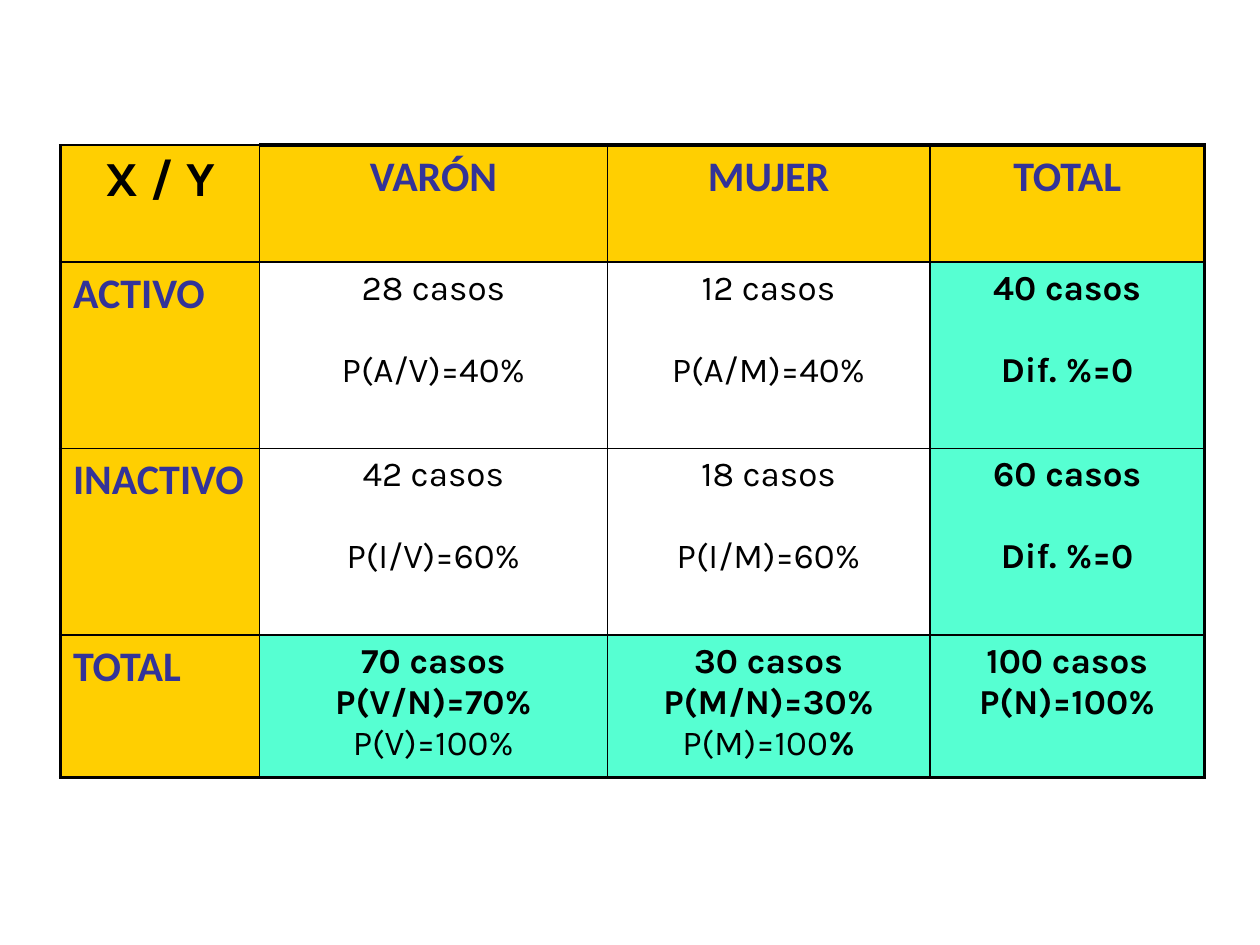
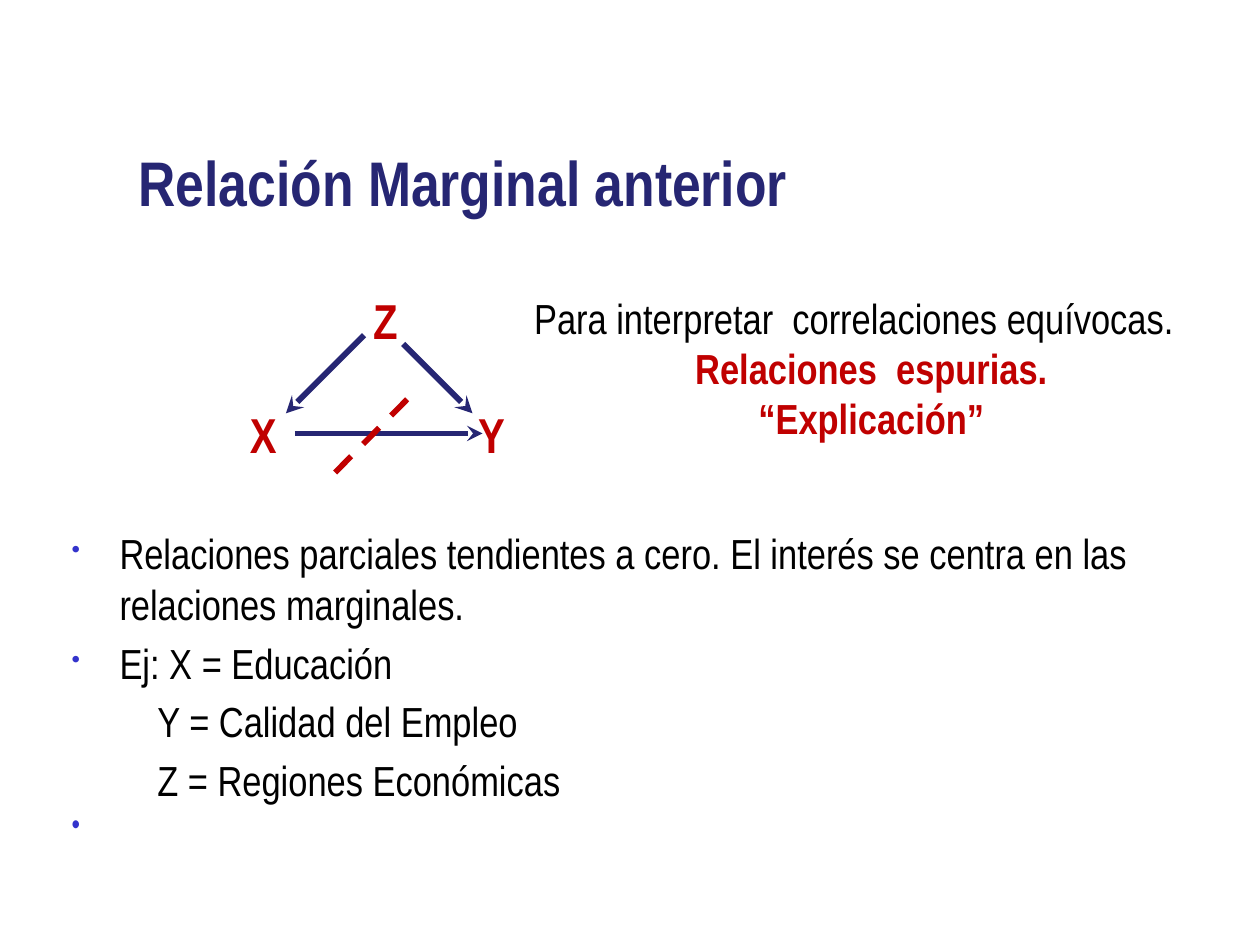
from dataclasses import dataclass

from lxml import etree
from pptx import Presentation
from pptx.dml.color import RGBColor
from pptx.enum.dml import MSO_LINE
from pptx.enum.shapes import MSO_CONNECTOR
from pptx.enum.text import MSO_ANCHOR, MSO_AUTO_SIZE, PP_ALIGN
from pptx.oxml.ns import qn
from pptx.util import Inches, Pt

LEFT, CENTER = PP_ALIGN.LEFT, PP_ALIGN.CENTER
TOP, MIDDLE, BOTTOM = MSO_ANCHOR.TOP, MSO_ANCHOR.MIDDLE, MSO_ANCHOR.BOTTOM
NO_AUTOFIT = MSO_AUTO_SIZE.NONE
DASH = MSO_LINE.DASH
STRAIGHT = MSO_CONNECTOR.STRAIGHT
TITLE_ONLY, BLANK = 5, 6

BLACK, WHITE = "000000", "FFFFFF"
GOLD, MINT = "FFCF01", "56FFD2"
HEADING_BLUE, NAVY, RED, BULLET_BLUE = "333399", "262673", "C00000", "3333CC"
NARROW, HEADING_FONT, DATA_FONT = "Arial Narrow", "Calibri", "Karla"
THIN, THICK = 1, 2.25


@dataclass(frozen=True)
class Run:
    text: str
    bold: bool = False


@dataclass(frozen=True)
class Line:
    runs: tuple[Run, ...]
    gap: float = 0


@dataclass(frozen=True)
class Arrow:
    start: tuple[float, float]
    end: tuple[float, float]
    color: str = NAVY
    width: float = 3.25
    dashed: bool = False


@dataclass(frozen=True)
class Letter:
    text: str
    x: float
    y: float


@dataclass(frozen=True)
class Point:
    text: str
    bullet: bool = False
    margin: float = 0.38
    size: float = 24
    color: str = BLACK
    gap: float = 4.8


def rgb(color: str) -> RGBColor:
    return RGBColor.from_string(color)


def write(paragraph, text: str, *, font: str = NARROW, size: float = 24,
          color: str = BLACK, bold: bool = False, align=LEFT, gap: float = 0) -> None:
    paragraph.alignment = align
    paragraph.space_before = Pt(gap)
    run = paragraph.add_run()
    run.text = text
    run.font.name = font
    run.font.size = Pt(size)
    run.font.bold = bold
    run.font.color.rgb = rgb(color)


def next_paragraph(frame, index: int):
    return frame.add_paragraph() if index else frame.paragraphs[0]


def add_frame(slide, left: float, top: float, width: float, height: float, anchor=TOP):
    frame = slide.shapes.add_textbox(
        Inches(left), Inches(top), Inches(width), Inches(height)).text_frame
    frame.word_wrap = True
    frame.vertical_anchor = anchor
    return frame


def set_borders(cell, widths: dict[str, float]) -> None:
    properties = cell._tc.get_or_add_tcPr()
    for side, width in widths.items():
        border = etree.SubElement(properties, qn(f"a:ln{side}"), w=str(Pt(width)))
        fill = etree.SubElement(border, qn("a:solidFill"))
        etree.SubElement(fill, qn("a:srgbClr"), val=BLACK)


def add_bullet(paragraph) -> None:
    properties = paragraph._p.get_or_add_pPr()
    color = etree.SubElement(properties, qn("a:buClr"))
    etree.SubElement(color, qn("a:srgbClr"), val=BULLET_BLUE)
    etree.SubElement(properties, qn("a:buSzPct"), val="60000")
    etree.SubElement(properties, qn("a:buChar"), char="•")


def add_arrow(slide, arrow: Arrow) -> None:
    connector = slide.shapes.add_connector(
        STRAIGHT, *(Inches(value) for value in arrow.start + arrow.end))
    connector.line.color.rgb = rgb(arrow.color)
    connector.line.width = Pt(arrow.width)
    if arrow.dashed:
        connector.line.dash_style = DASH
    else:
        etree.SubElement(connector.line._get_or_add_ln(), qn("a:tailEnd"), type="stealth")
    etree.SubElement(connector._element.spPr, qn("a:effectLst"))


COLUMN_WIDTHS = (1.58, 2.76, 2.56, 2.18)
ROW_HEIGHTS = (0.93, 1.48, 1.48, 1.13)
COLUMN_HEADINGS = ("VARÓN", "MUJER", "TOTAL")
ROW_HEADINGS = ("ACTIVO", "INACTIVO", "TOTAL")
SPLIT_GAP = 23.4


def split_cell(cases: str, share: str, bold: bool = False) -> tuple[Line, ...]:
    return Line((Run(cases, bold),)), Line((Run(share, bold),), SPLIT_GAP)


def total_cell(cases: str, share: str, *column_share: Run) -> tuple[Line, ...]:
    lines = Line((Run(cases, True),)), Line((Run(share, True),))
    return lines + ((Line(column_share),) if column_share else ())


CASES = (
    (split_cell("28 casos", "P(A/V)=40%"), split_cell("12 casos", "P(A/M)=40%"),
     split_cell("40 casos", "Dif. %=0", True)),
    (split_cell("42 casos", "P(I/V)=60%"), split_cell("18 casos", "P(I/M)=60%"),
     split_cell("60 casos", "Dif. %=0", True)),
    (total_cell("70 casos", "P(V/N)=70%", Run("P(V)=100%")),
     total_cell("30 casos", "P(M/N)=30%", Run("P(M)=100"), Run("%", True)),
     total_cell("100 casos", "P(N)=100%")),
)


def fill_cell(cell, row: int, column: int) -> None:
    first = cell.text_frame.paragraphs[0]
    if row == 0 and column == 0:
        write(first, "X / Y", font=DATA_FONT, size=28, bold=True, align=CENTER)
    elif row == 0:
        write(first, COLUMN_HEADINGS[column - 1], font=HEADING_FONT,
              color=HEADING_BLUE, bold=True, align=CENTER)
    elif column == 0:
        write(first, ROW_HEADINGS[row - 1], font=HEADING_FONT,
              color=HEADING_BLUE, bold=True)
    else:
        for index, line in enumerate(CASES[row - 1][column - 1]):
            paragraph = next_paragraph(cell.text_frame, index)
            for run in line.runs:
                write(paragraph, run.text, font=DATA_FONT, size=20,
                      bold=run.bold, align=CENTER, gap=line.gap)


def build_contingency_slide(deck) -> None:
    slide = deck.slides.add_slide(deck.slide_layouts[BLANK])
    last_row, last_column = len(ROW_HEIGHTS) - 1, len(COLUMN_WIDTHS) - 1
    table = slide.shapes.add_table(
        len(ROW_HEIGHTS), len(COLUMN_WIDTHS), Inches(0.48), Inches(1.15),
        Inches(sum(COLUMN_WIDTHS)), Inches(sum(ROW_HEIGHTS))).table
    table.first_row = table.horz_banding = False
    for column, width in enumerate(COLUMN_WIDTHS):
        table.columns[column].width = Inches(width)
    for row, height in enumerate(ROW_HEIGHTS):
        table.rows[row].height = Inches(height)
        for column in range(len(COLUMN_WIDTHS)):
            cell = table.cell(row, column)
            set_borders(cell, {
                "L": THICK if column == 0 else THIN,
                "R": THICK if column == last_column else THIN,
                "T": THICK if row == 0 and column else THIN,
                "B": THICK if row == last_row else THIN,
            })
            is_heading = row == 0 or column == 0
            is_total = row == last_row or column == last_column
            cell.fill.solid()
            cell.fill.fore_color.rgb = rgb(GOLD if is_heading else MINT if is_total else WHITE)
            fill_cell(cell, row, column)


VARIABLES = (Letter("Z", 3.06, 2.54), Letter("X", 2.09, 3.44), Letter("Y", 3.9, 3.44))
ARROWS = (
    Arrow((2.34, 3.44), (3.83, 3.44), width=3),
    Arrow((2.89, 2.66), (2.27, 3.28)),
    Arrow((3.2, 2.73), (3.75, 3.28)),
    Arrow((2.66, 3.75), (3.28, 3.12), RED, dashed=True),
)
POINTS = (
    Point("Relaciones parciales tendientes a cero. El interés se centra en las "
          "relaciones marginales.", bullet=True, gap=0),
    Point("Ej: X = Educación", bullet=True),
    Point("Y = Calidad del Empleo", margin=0.68),
    Point("Z = Regiones Económicas", margin=0.68),
    Point("•", margin=0, size=16.8, color=BULLET_BLUE, gap=0),
)


def build_marginal_slide(deck) -> None:
    slide = deck.slides.add_slide(deck.slide_layouts[TITLE_ONLY])
    title = slide.shapes.title
    title.left, title.top = Inches(1), Inches(1.41)
    title.width, title.height = Inches(9), Inches(0.38)
    title.text_frame.auto_size = NO_AUTOFIT
    title.text_frame.vertical_anchor = BOTTOM
    write(title.text_frame.paragraphs[0], "Relación Marginal anterior",
          size=36, color=NAVY, bold=True)

    for letter in VARIABLES:
        frame = add_frame(slide, letter.x - 0.3, letter.y - 0.25, 0.6, 0.5, MIDDLE)
        write(frame.paragraphs[0], letter.text, size=28, color=RED, bold=True, align=CENTER)

    points = add_frame(slide, 0.47, 4.14, 9.08, 2.9)
    for index, point in enumerate(POINTS):
        paragraph = next_paragraph(points, index)
        write(paragraph, point.text, size=point.size, color=point.color, gap=point.gap)
        properties = paragraph._p.get_or_add_pPr()
        properties.set("marL", str(Inches(point.margin)))
        if point.bullet:
            properties.set("indent", str(-Inches(point.margin)))
            add_bullet(paragraph)

    for arrow in ARROWS:
        add_arrow(slide, arrow)

    purpose = add_frame(slide, 4.14, 2.27, 5.55, 1.53)
    write(purpose.paragraphs[0], "Para interpretar  correlaciones equívocas.")
    for text in ("Relaciones  espurias.", "“Explicación”"):
        write(purpose.add_paragraph(), text, color=RED, bold=True, align=CENTER)


def main() -> None:
    deck = Presentation()
    deck.slide_width, deck.slide_height = Inches(10), Inches(7.5)
    build_contingency_slide(deck)
    build_marginal_slide(deck)
    deck.save("out.pptx")


if __name__ == "__main__":
    main()
